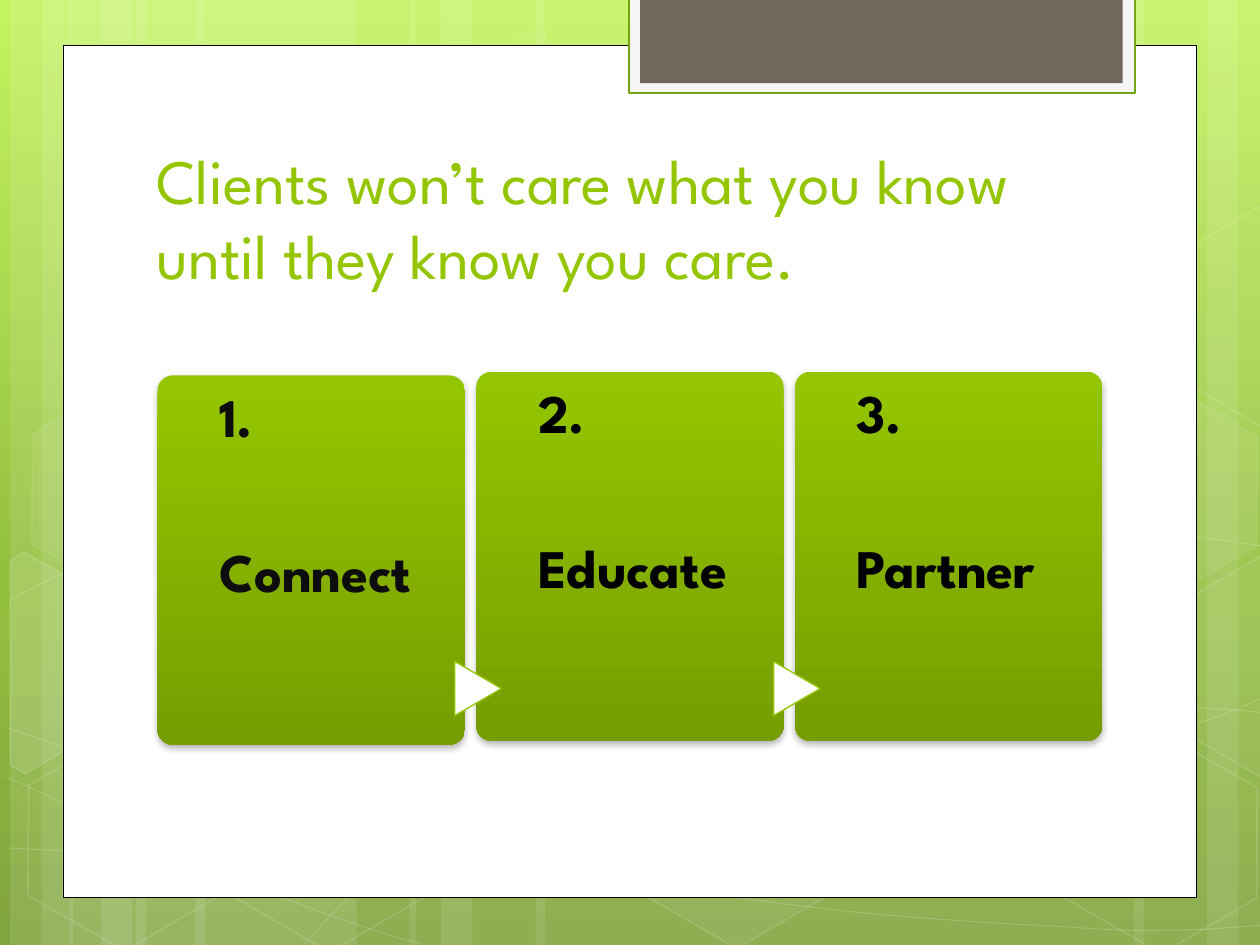
from copy import deepcopy
from dataclasses import dataclass
from math import cos, radians, sin

from lxml.etree import SubElement
from pptx import Presentation
from pptx.dml.color import RGBColor
from pptx.enum.shapes import MSO_SHAPE
from pptx.enum.text import MSO_ANCHOR, MSO_AUTO_SIZE, PP_ALIGN
from pptx.oxml.ns import qn
from pptx.util import Inches, Pt


@dataclass(frozen=True)
class Theme:
    font: str = "League Spartan"
    title_size: int = 36
    card_size: int = 31
    white: str = "FFFFFF"
    black: str = "000000"
    soft_black: str = "0D0D0D"
    green: str = "94C600"
    dark_green: str = "769D00"
    tab_line: str = "74A510"
    tab_edge: str = "F5F5F5"
    tab_fill: str = "71685A"
    backdrop: tuple = ((0, "C3F35F"), (0.62, "93BF3F"), (1, "81A53E"))


theme = Theme()


def paint(shape, fill=None, fill_alpha=100, line=None, width=1, line_alpha=100):
    """Set fill, outline and their opacity in percent; drop the shadow."""
    shape.shadow.inherit = False
    for part, color, alpha in ((shape.fill, fill, fill_alpha), (shape.line.fill, line, line_alpha)):
        if color is None:
            part.background()
            continue
        part.solid()
        part.fore_color.rgb = RGBColor.from_string(color)
        if alpha < 100:
            props = shape.element.spPr
            holder = props if part is shape.fill else props.find(qn("a:ln"))
            tint = holder.find(qn("a:solidFill"))[0]
            SubElement(tint, qn("a:alpha"), val=str(alpha * 1000))
    if line:
        shape.line.width = Pt(width)


def outline(points, close):
    """Build a freeform through points given in inches."""
    spots = [(Inches(x), Inches(y)) for x, y in points]
    builder = page.shapes.build_freeform(*spots[0])
    builder.add_line_segments(spots[1:], close=close)
    return builder.convert_to_shape()


deck = Presentation()
deck.slide_width, deck.slide_height = Inches(10), Inches(7.5)
page = deck.slides.add_slide(deck.slide_layouts[5])

# Background gradient
backdrop = page.background.fill
backdrop.gradient()
backdrop.gradient_angle = 270
stop_list = next(page.element.iter(qn("a:gsLst")))
stop_list.insert(1, deepcopy(stop_list[0]))
for stop, (position, color) in zip(backdrop.gradient_stops, theme.backdrop):
    stop.position = position
    stop.color.rgb = RGBColor.from_string(color)

# Pale vertical stripes: left, width
stripes = [
    (1.08, 1.75), (0.08, 0.5), (0.33, 0.83), (1.55, 1.75), (0.55, 0.5), (0.8, 0.83),
    (7.33, 1.75), (9.58, 0.5), (9, 0.83), (4.25, 3.08), (3.25, 0.5), (3.5, 0.83),
]
for left, width in stripes:
    stripe = page.shapes.add_shape(MSO_SHAPE.RECTANGLE, Inches(left), 0, Inches(width), Inches(7.5))
    paint(stripe, theme.white, 10)

# Thin sweeping lines: a start point, then three Bezier points per segment
curves = [
    [(0.07, 6.73), (0.61, 6.76), (1.15, 6.79), (1.9, 6.78), (2.65, 6.77), (3.58, 6.75), (4.58, 6.65),
     (5.58, 6.55), (7, 6.36), (7.92, 6.17), (8.83, 5.98), (9.77, 5.68), (10.07, 5.51)],
    [(0.07, 4.77), (0.36, 4.61), (0.65, 4.46), (1.21, 4.31), (1.78, 4.16), (2.59, 3.94), (3.47, 3.87),
     (4.36, 3.8), (5.44, 3.79), (6.54, 3.87), (7.64, 3.95), (9.47, 4.26), (10.07, 4.34)],
    [(0.06, 6.17), (1.27, 6.72), (2.47, 7.27), (3.34, 7.49)],
    [(0.07, 5.78), (0.38, 5.89), (0.7, 6), (1.28, 6.16), (1.86, 6.31), (2.73, 6.56), (3.57, 6.73),
     (4.4, 6.9), (5.45, 7.08), (6.28, 7.18), (7.11, 7.29), (8, 7.33), (8.53, 7.36),
     (9.05, 7.4), (9.19, 7.38), (9.45, 7.38), (9.71, 7.37), (9.89, 7.35), (10.07, 7.34)],
    [(2.42, 7.49), (2.6, 7.29), (2.78, 7.09), (3.02, 6.91), (3.26, 6.73), (3.6, 6.53), (3.88, 6.39),
     (4.16, 6.25), (4.33, 6.19), (4.7, 6.09), (5.06, 5.99), (5.73, 5.85), (6.08, 5.78),
     (6.44, 5.71), (6.49, 5.71), (6.8, 5.69), (7.11, 5.66), (7.6, 5.63), (7.94, 5.62),
     (8.29, 5.61), (8.86, 5.62), (8.86, 5.62), (8.86, 5.62), (9.53, 5.62), (9.53, 5.62),
     (9.71, 5.63), (9.88, 5.64), (9.97, 5.65), (10.06, 5.66), (10.03, 5.65), (10.06, 5.66)],
]
for points in curves:
    curve = outline(points, False)
    paint(curve, line=theme.white, width=0.5, line_alpha=20)
    # Join every three straight steps into one Bezier segment
    lines = list(curve.element.iter(qn("a:lnTo")))
    route = lines[0].getparent()
    for first in range(0, len(lines), 3):
        bend = SubElement(route, qn("a:cubicBezTo"))
        for step in lines[first:first + 3]:
            bend.append(step[0])
            route.remove(step)

# Hexagons: left, top, fill opacity, line opacity
hexagons = [
    (3.34, 0.36, 4, 8), (4.97, 5.89, 6, 12), (0.11, 5.91, 0, 12), (0.14, 3.12, 7, 8), (1.74, 5.92, 0, 12),
    (7.53, 4.53, 10, 12), (8.34, 5.93, 0, 12), (8.34, 3.14, 7, 8),
]
for left, top, fill_alpha, line_alpha in hexagons:
    hexagon = page.shapes.add_shape(MSO_SHAPE.HEXAGON, Inches(left), Inches(top), Inches(1.75), Inches(1.52))
    hexagon.adjustments[0] = 0.285
    hexagon.rotation = 30
    paint(hexagon, theme.white if fill_alpha else None, fill_alpha, theme.white, 1, line_alpha)

# Hexagons cut off by the page edges: fill opacity, centre, corners after turning
cut_hexagons = [
    (10, 0.36, 5.35, [(0.08, 4.45), (0.19, 4.38), (0.96, 4.82), (0.95, 5.7), (0.2, 6.14), (0.08, 6.07)]),
    (4, 9.85, 5.2, [(9.26, 4.85), (10.01, 4.41), (10.09, 4.46), (10.09, 6.13), (10.02, 6.17), (9.26, 5.73)]),
    (0, 9.85, 2.41, [(9.26, 2.07), (10.01, 1.63), (10.1, 1.68), (10.09, 3.35), (10.02, 3.39), (9.26, 2.95)]),
]
across, along = cos(radians(30)), sin(radians(30))
for fill_alpha, middle_x, middle_y, corners in cut_hexagons:
    offsets = [(x - middle_x, y - middle_y) for x, y in corners]
    upright = [(middle_x + x * across + y * along, middle_y - x * along + y * across) for x, y in offsets]
    hexagon = outline(upright, True)
    hexagon.rotation = 30
    paint(hexagon, theme.white if fill_alpha else None, fill_alpha, theme.white, 1, 12)

# White panel and the tab at its top
panels = [
    (0.5, 0.36, 9, 6.76, theme.white, theme.black, 0.5),
    (4.99, -0.02, 4.02, 0.76, theme.tab_edge, theme.tab_line, 1.25),
    (5.08, -0.02, 3.83, 0.68, theme.tab_fill, None, 0),
]
for left, top, width, height, fill, line, weight in panels:
    panel = page.shapes.add_shape(
        MSO_SHAPE.RECTANGLE, Inches(left), Inches(top), Inches(width), Inches(height))
    paint(panel, fill, line=line, width=weight)

# Title, brought in front of the panel
title = page.shapes.title
title.element.getparent().append(title.element)
title.left, title.top, title.width, title.height = Inches(1.14), Inches(1.12), Inches(7.68), Inches(1.25)
frame = title.text_frame
frame.word_wrap = True
frame.auto_size = MSO_AUTO_SIZE.NONE
frame.vertical_anchor = MSO_ANCHOR.BOTTOM
para = frame.paragraphs[0]
para.alignment = PP_ALIGN.LEFT
span = para.add_run()
span.text = "Clients won’t care what you know until they know you care."
span.font.name = theme.font
span.font.size = Pt(theme.title_size)
span.font.color.rgb = RGBColor.from_string(theme.green)

# Three step cards, with an arrow leading into each later one
cards = [
    ("1.", "Connect", 2.98, theme.soft_black),
    ("2.", "Educate", 2.95, theme.black),
    ("3.", "Partner", 2.95, theme.black),
]
for index, (number, label, top, color) in enumerate(cards):
    left = 1.25 + 2.53 * index
    card = page.shapes.add_shape(
        MSO_SHAPE.ROUNDED_RECTANGLE, Inches(left), Inches(top), Inches(2.44), Inches(2.93))
    card.adjustments[0] = 0.05
    paint(card)
    card.fill.gradient()
    card.fill.gradient_angle = 270
    for position, stop, shade in zip((0, 1), card.fill.gradient_stops, (theme.green, theme.dark_green)):
        stop.position = position
        stop.color.rgb = RGBColor.from_string(shade)
    shadow = SubElement(card.element.spPr.find(qn("a:effectLst")), qn("a:outerShdw"),
                        blurRad=str(Pt(4)), dist=str(Pt(2)), dir="5400000", rotWithShape="0")
    shadow_color = SubElement(shadow, qn("a:srgbClr"), val=theme.black)
    SubElement(shadow_color, qn("a:alpha"), val="28000")

    if index:
        arrow = page.shapes.add_shape(
            MSO_SHAPE.FLOWCHART_EXTRACT, Inches(left - 0.2), Inches(5.28), Inches(0.43), Inches(0.37))
        arrow.rotation = 90
        paint(arrow, theme.white, line=theme.green, width=0.75)

    box = page.shapes.add_textbox(Inches(left + 0.49), Inches(top), Inches(1.82), Inches(2.93))
    frame = box.text_frame
    frame.word_wrap = True
    frame.margin_left = frame.margin_right = frame.margin_bottom = 0
    frame.margin_top = Inches(0.12)
    for para, text in ((frame.paragraphs[0], number), (frame.add_paragraph(), label)):
        para.line_spacing = 0.9
        if text == label:
            para.space_before = Pt(55)
        span = para.add_run()
        span.text = text
        span.font.name = theme.font
        span.font.size = Pt(theme.card_size)
        span.font.bold = True
        span.font.color.rgb = RGBColor.from_string(color)

deck.save("out.pptx")
